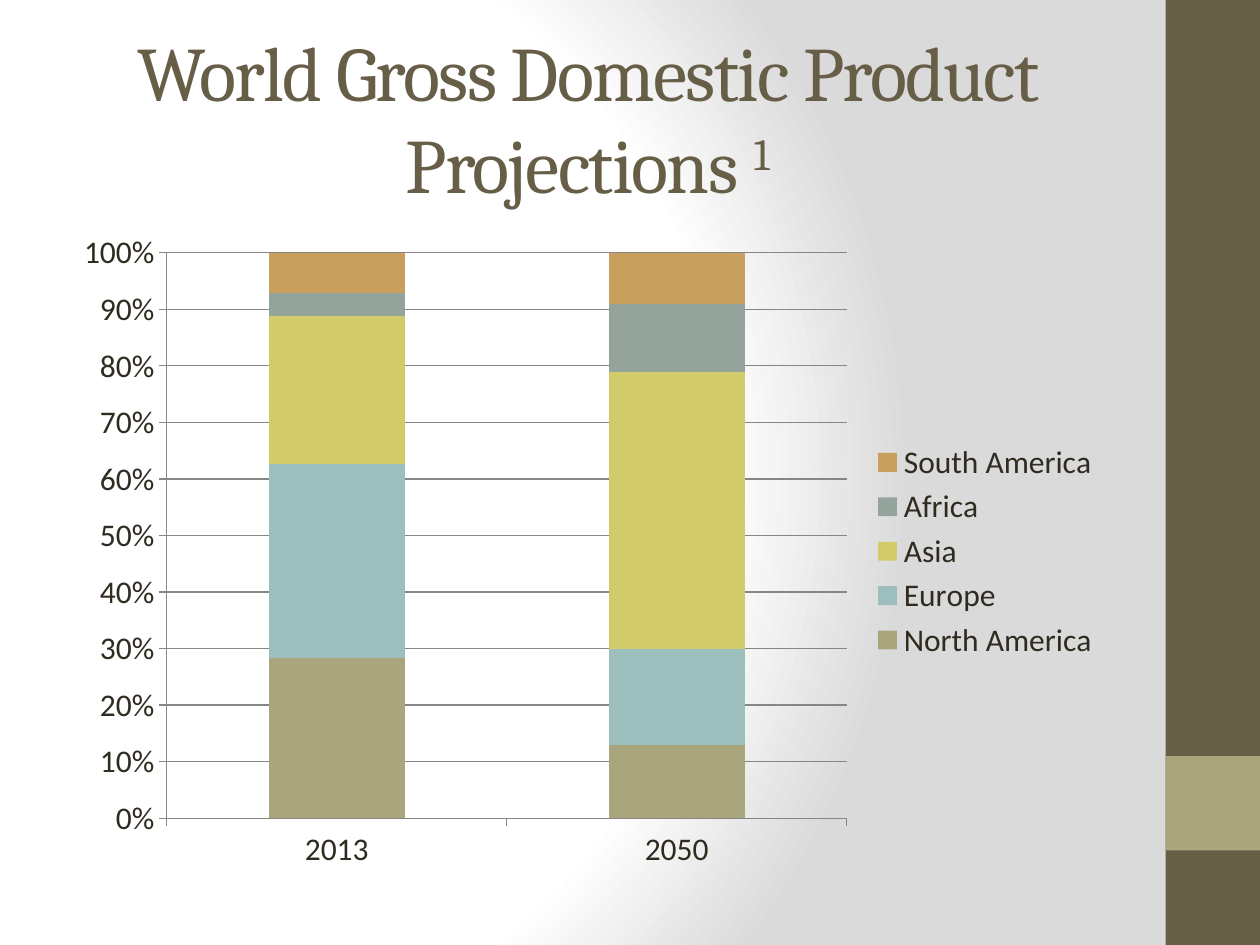
from pptx import Presentation
from pptx.chart.data import CategoryChartData
from pptx.dml.color import RGBColor
from pptx.enum.chart import XL_CHART_TYPE as Kind, XL_LEGEND_POSITION as Side
from pptx.enum.chart import XL_TICK_MARK as Tick
from pptx.enum.shapes import MSO_SHAPE as Shape
from pptx.enum.text import MSO_ANCHOR as Anchor, MSO_AUTO_SIZE as Fit, PP_ALIGN as Align
from pptx.oxml import parse_xml
from pptx.oxml.ns import nsdecls, qn
from pptx.util import Inches, Pt

BROWN = RGBColor(0x67, 0x5E, 0x47)
OLIVE = RGBColor(0xA9, 0xA5, 0x7C)
TEAL = RGBColor(0x9C, 0xBE, 0xBD)
LIME = RGBColor(0xD2, 0xCB, 0x6C)
SAGE = RGBColor(0x95, 0xA3, 0x9D)
AMBER = RGBColor(0xC8, 0x9F, 0x5D)
INK = RGBColor(0x2F, 0x2B, 0x20)
GREY = RGBColor(0x86, 0x86, 0x86)
WHITE = RGBColor(0xFF, 0xFF, 0xFF)
SILVER = RGBColor(0xDA, 0xDA, 0xDA)

YEARS = ["2013", "2050"]
SHARES = [
    ("North America", (28, 13), OLIVE),
    ("Europe", (34, 17), TEAL),
    ("Asia", (26, 49), LIME),
    ("Africa", (4, 12), SAGE),
    ("South America", (7, 9), AMBER),
]


def add_glow(slide):
    """Radial gradient background."""
    slide.background.fill.solid()
    stops = "".join(
        f'<a:gs pos="{pos * 1000}"><a:srgbClr val="{color}"/></a:gs>'
        for pos, color in ((0, WHITE), (75, WHITE), (100, SILVER)))
    grad = parse_xml(
        f'<a:gradFill {nsdecls("a")} rotWithShape="1"><a:gsLst>{stops}</a:gsLst>'
        '<a:path path="circle"><a:fillToRect l="20000" t="50000" r="100000" b="50000"/>'
        '</a:path></a:gradFill>')
    props = slide.element.find(".//" + qn("p:bgPr"))
    props.replace(props[0], grad)


def add_band(slide, x, y, w, h):
    """Side band with a lighter square near its foot."""
    for top, high, color in ((y, h, BROWN), (y + h - 2 * w, w, OLIVE)):
        block = slide.shapes.add_shape(Shape.RECTANGLE, x, top, w, high)
        block.shadow.inherit = False
        block.fill.solid()
        block.fill.fore_color.rgb = color
        block.line.fill.background()


def add_title(slide, x, y, w, h):
    """Centred title with a raised note mark."""
    title = slide.shapes.title
    title.left, title.top, title.width, title.height = x, y, w, h
    frame = title.text_frame
    frame.word_wrap = True
    frame.auto_size = Fit.NONE
    frame.vertical_anchor = Anchor.MIDDLE
    para = frame.paragraphs[0]
    para.alignment = Align.CENTER
    font = para.font
    font.name, font.size, font.color.rgb = "Cambria", Pt(44), BROWN
    for text, base in (("World Gross Domestic Product Projections ", 0), ("1", 30)):
        run = para.add_run()
        run.text = text
        props = run.font._element
        props.set("spc", "-100")
        if base:
            props.set("baseline", str(base * 1000))


def add_shares(slide, x, y, w, h):
    """Stacked columns of each continent's share."""
    data = CategoryChartData()
    data.categories = YEARS
    for name, vals, _ in SHARES:
        data.add_series(name, vals)
    chart = slide.shapes.add_chart(
        Kind.COLUMN_STACKED_100, x, y, w, h, data).chart
    chart.has_title = False
    font = chart.font
    font.name, font.size, font.color.rgb = "Calibri", Pt(18), INK

    # Columns
    plot = chart.plots[0]
    plot.gap_width, plot.overlap = 150, 100
    plot.vary_by_categories = False
    for series, (_, _, color) in zip(plot.series, SHARES):
        series.format.fill.solid()
        series.format.fill.fore_color.rgb = color

    # Axes and grid
    scale = chart.value_axis
    scale.has_major_gridlines = True
    scale.major_unit = 0.1
    scale.tick_labels.number_format = "0%"
    scale.tick_labels.number_format_is_linked = False
    for axis in (scale, chart.category_axis):
        axis.major_tick_mark = Tick.OUTSIDE
        axis.minor_tick_mark = Tick.NONE
    for part in (scale, chart.category_axis, scale.major_gridlines):
        part.format.line.color.rgb = GREY
        part.format.line.width = Pt(0.75)

    # Legend
    chart.has_legend = True
    chart.legend.position = Side.RIGHT
    chart.legend.include_in_layout = False


def main():
    deck = Presentation()
    deck.slide_width, deck.slide_height = Inches(10), Inches(7.5)
    slide = deck.slides.add_slide(deck.slide_layouts[5])
    add_glow(slide)
    add_band(slide, Inches(9.25), 0, Inches(0.75), Inches(7.5))
    add_title(slide, Inches(0.5), Inches(0.3), Inches(8.33), Inches(1.25))
    add_shares(slide, Inches(0.5), Inches(1.75), Inches(8.33), Inches(5.25))
    deck.save("out.pptx")


if __name__ == "__main__":
    main()
